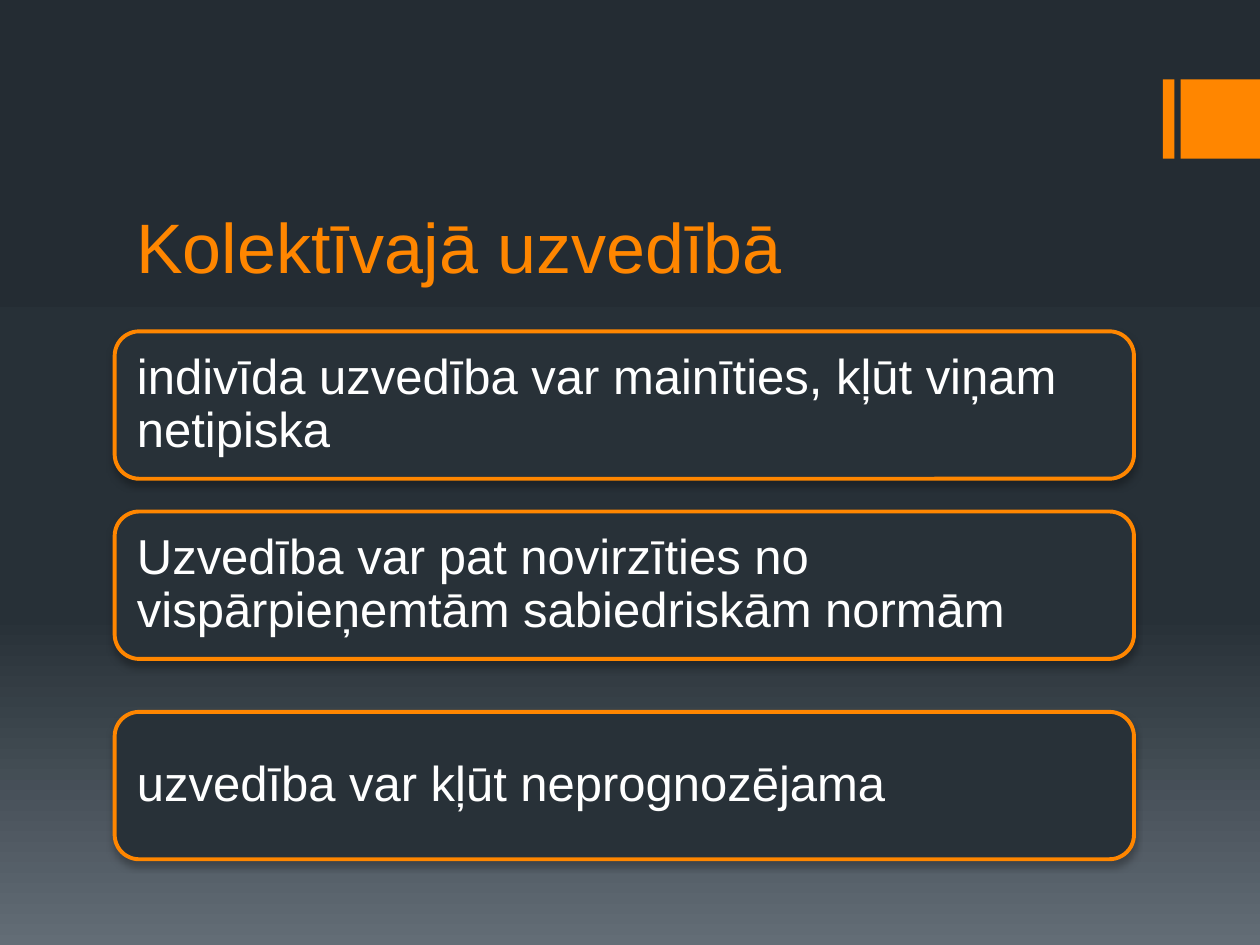
from lxml.etree import SubElement
from pptx import Presentation
from pptx.dml.color import RGBColor
from pptx.enum.shapes import MSO_SHAPE
from pptx.enum.text import MSO_ANCHOR, PP_ALIGN
from pptx.oxml import parse_xml
from pptx.oxml.ns import nsdecls, qn
from pptx.util import Inches, Pt

COLORS = {
    "accent": "FF8600",
    "panel": "283138",
    "text": "FFFFFF",
    "shadow": "000000",
}
BACKGROUND_STOPS = [(0, "242C33"), (65, "273037"), (100, "636D76")]
FONT = "Arial"
STATEMENTS = [
    (2.63, "indivīda uzvedība var mainīties, kļūt viņam netipiska"),
    (4.06, "Uzvedība var pat novirzīties no vispārpieņemtām sabiedriskām normām"),
    (5.65, "uzvedība var kļūt neprognozējama"),
]


def color(name):
    return RGBColor.from_string(COLORS[name])


def format_paragraph(para, size, color_name):
    para.alignment = PP_ALIGN.LEFT
    para.font.name = FONT
    para.font.size = Pt(size)
    para.font.color.rgb = color(color_name)


def set_background(page):
    stops = "".join(
        f'<a:gs pos="{percent * 1000}"><a:srgbClr val="{value}"/></a:gs>'
        for percent, value in BACKGROUND_STOPS
    )
    background = parse_xml(
        f'<p:bg {nsdecls("p", "a")}><p:bgPr><a:gradFill rotWithShape="1">'
        f'<a:gsLst>{stops}</a:gsLst><a:lin ang="5400000" scaled="0"/>'
        "</a:gradFill><a:effectLst/></p:bgPr></p:bg>"
    )
    page.element.find(qn("p:cSld")).insert(0, background)


def add_corner_mark(page, left, top, side):
    """Place a thin bar and a square at the right edge."""
    for offset, width in ((0, 0.09), (0.14, side)):
        mark = page.shapes.add_shape(
            MSO_SHAPE.RECTANGLE,
            Inches(left + offset), Inches(top), Inches(width), Inches(side),
        )
        mark.shadow.inherit = False
        mark.fill.solid()
        mark.fill.fore_color.rgb = color("accent")
        mark.line.fill.background()


def set_title(page, left, top, width, height):
    title = page.shapes.title
    title.left, title.top = Inches(left), Inches(top)
    title.width, title.height = Inches(width), Inches(height)
    frame = title.text_frame
    frame.text = "Kolektīvajā uzvedībā"
    frame.vertical_anchor = MSO_ANCHOR.BOTTOM
    format_paragraph(frame.paragraphs[0], 40, "accent")


def add_shadow(shape):
    shape.shadow.inherit = False
    effects = shape.element.spPr.find(qn("a:effectLst"))
    shadow = SubElement(
        effects, qn("a:outerShdw"),
        blurRad=str(Pt(4)), dist=str(Pt(3)), dir="5400000", rotWithShape="0",
    )
    tone = SubElement(shadow, qn("a:srgbClr"), val=COLORS["shadow"])
    SubElement(tone, qn("a:alpha"), val="28000")


def add_statement(page, text, left, top, width, height):
    box = page.shapes.add_shape(
        MSO_SHAPE.ROUNDED_RECTANGLE,
        Inches(left), Inches(top), Inches(width), Inches(height),
    )
    box.fill.solid()
    box.fill.fore_color.rgb = color("panel")
    box.line.color.rgb = color("accent")
    box.line.width = Pt(2.25)
    add_shadow(box)

    frame = box.text_frame
    frame.word_wrap = True
    frame.vertical_anchor = MSO_ANCHOR.MIDDLE
    frame.margin_left = frame.margin_right = Inches(0.12)
    frame.margin_top = frame.margin_bottom = Inches(0.12)
    frame.text = text
    para = frame.paragraphs[0]
    para.line_spacing = 0.9
    format_paragraph(para, 28, "text")


def main():
    deck = Presentation()
    deck.slide_width, deck.slide_height = Inches(10), Inches(7.5)
    page = deck.slides.add_slide(deck.slide_layouts[5])  # title only

    set_background(page)
    add_corner_mark(page, 9.23, 0.63, 0.63)
    set_title(page, 0.98, 1.55, 8.02, 0.78)
    for top, text in STATEMENTS:
        add_statement(page, text, 0.91, top, 8.09, 1.17)

    deck.save("out.pptx")


if __name__ == "__main__":
    main()
